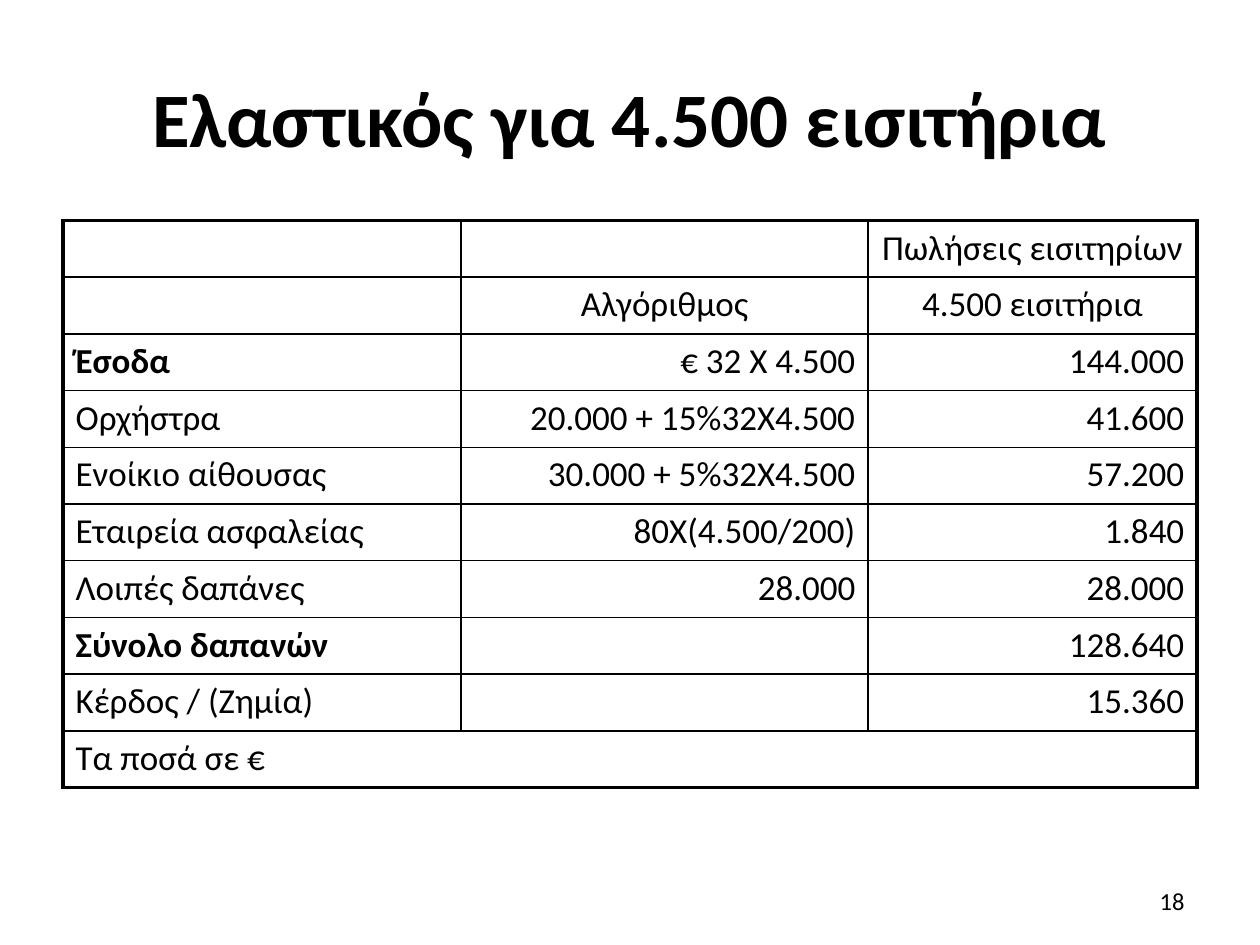
from dataclasses import dataclass

from lxml import etree
from pptx import Presentation
from pptx.dml.color import RGBColor
from pptx.enum import text
from pptx.oxml import ns
from pptx.util import Inches, Pt

COLOURS = {"ink": "000000", "paper": "FFFFFF"}
FONT = "Calibri"
LEFT, CENTER, RIGHT = text.PP_ALIGN.LEFT, text.PP_ALIGN.CENTER, text.PP_ALIGN.RIGHT
COLUMN_WIDTHS = (3.16, 3.23, 2.61)
ROW_HEIGHT = 0.45
THIN, THICK = 1, 2.25


@dataclass
class Label:
    wording: str
    left: float
    top: float
    width: float
    height: float
    size: int
    align: text.PP_ALIGN
    bold: bool = False


@dataclass
class BudgetRow:
    item: str = ""
    formula: str = ""
    amount: str = ""
    bold: bool = False
    heading: bool = False


LABELS = [
    Label("Ελαστικός για 4.500 εισιτήρια", 0.5, 0.3, 9, 1.25, 44, CENTER, True),
    Label("18", 7.17, 6.95, 2.33, 0.4, 14, RIGHT),
]
BUDGET = [
    BudgetRow(amount="Πωλήσεις εισιτηρίων", heading=True),
    BudgetRow(formula="Αλγόριθμος", amount="4.500 εισιτήρια", heading=True),
    BudgetRow("Έσοδα", "€ 32 Χ 4.500", "144.000", bold=True),
    BudgetRow("Ορχήστρα", "20.000 + 15%32Χ4.500", "41.600"),
    BudgetRow("Ενοίκιο αίθουσας", "30.000 + 5%32Χ4.500", "57.200"),
    BudgetRow("Εταιρεία ασφαλείας", "80Χ(4.500/200)", "1.840"),
    BudgetRow("Λοιπές δαπάνες", "28.000", "28.000"),
    BudgetRow("Σύνολο δαπανών", "", "128.640", bold=True),
    BudgetRow("Κέρδος / (Ζημία)", "", "15.360"),
    BudgetRow("Τα ποσά σε €"),
]


def write(para, wording: str, size: int, align: text.PP_ALIGN, bold: bool) -> None:
    para.alignment = align
    if not wording:
        return
    span = para.add_run()
    span.text = wording
    span.font.name = FONT
    span.font.size = Pt(size)
    span.font.bold = bold
    span.font.color.rgb = RGBColor.from_string(COLOURS["ink"])


def add_label(page, label: Label) -> None:
    box = page.shapes.add_textbox(
        Inches(label.left), Inches(label.top), Inches(label.width), Inches(label.height)
    )
    frame = box.text_frame
    frame.word_wrap = True
    frame.vertical_anchor = text.MSO_ANCHOR.MIDDLE
    write(frame.paragraphs[0], label.wording, label.size, label.align, label.bold)


def set_borders(cell, widths: dict[str, float]) -> None:
    properties = cell._tc.get_or_add_tcPr()
    for position, (side, width) in enumerate(widths.items()):
        line = etree.Element(ns.qn(f"a:ln{side}"), w=str(Pt(width)))
        fill = etree.SubElement(line, ns.qn("a:solidFill"))
        etree.SubElement(fill, ns.qn("a:srgbClr"), val=COLOURS["ink"])
        properties.insert(position, line)


def add_budget(page, rows: list[BudgetRow]) -> None:
    last_row, last_column = len(rows) - 1, len(COLUMN_WIDTHS) - 1
    table = page.shapes.add_table(
        len(rows), len(COLUMN_WIDTHS), Inches(0.5), Inches(1.75),
        Inches(sum(COLUMN_WIDTHS)), Inches(ROW_HEIGHT * len(rows)),
    ).table
    table.first_row = table.horz_banding = False
    for column, width in zip(table.columns, COLUMN_WIDTHS):
        column.width = Inches(width)
    table.cell(last_row, 0).merge(table.cell(last_row, last_column))

    for r, row in enumerate(rows):
        table.rows[r].height = Inches(ROW_HEIGHT)
        for c, wording in enumerate((row.item, row.formula, row.amount)):
            cell = table.cell(r, c)
            cell.fill.background()
            at_right = c + cell.span_width - 1 == last_column or c == last_column
            set_borders(cell, {
                "L": THICK if c == 0 else THIN,
                "R": THICK if at_right else THIN,
                "T": THICK if r == 0 else THIN,
                "B": THICK if r == last_row else THIN,
            })
            align = CENTER if row.heading else LEFT if c == 0 else RIGHT
            para = cell.text_frame.paragraphs[0]
            write(para, wording, 20, align, row.bold and c == 0)


def main() -> None:
    deck = Presentation()
    deck.slide_width, deck.slide_height = Inches(10), Inches(7.5)
    page = deck.slides.add_slide(deck.slide_layouts[6])
    page.background.fill.solid()
    page.background.fill.fore_color.rgb = RGBColor.from_string(COLOURS["paper"])
    add_budget(page, BUDGET)
    for label in LABELS:
        add_label(page, label)
    deck.save("out.pptx")


if __name__ == "__main__":
    main()
